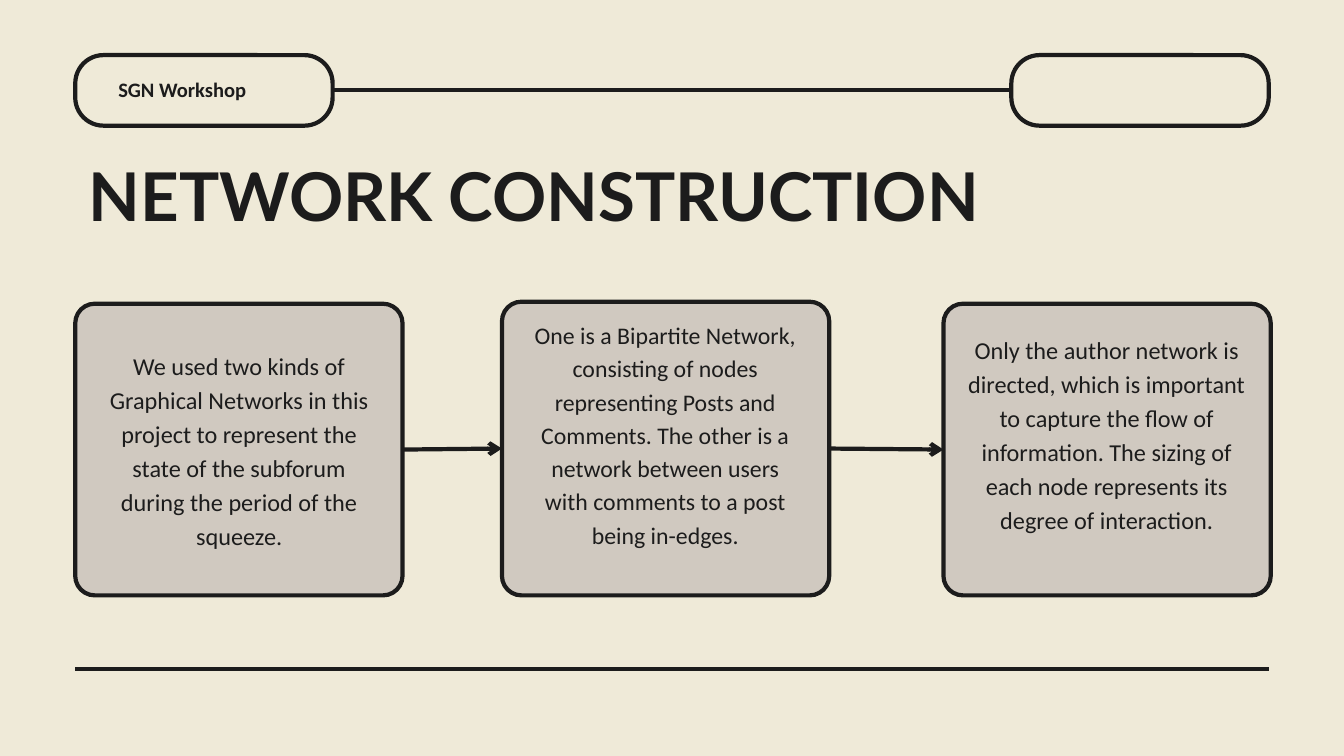
"""Build the network construction slide with three linked cards."""
import pptx
import pptx.dml.color
import pptx.enum.shapes
import pptx.enum.text
import pptx.oxml
import pptx.oxml.ns
import pptx.util

Inches = pptx.util.Inches
Pt = pptx.util.Pt
RGBColor = pptx.dml.color.RGBColor
ALIGN = pptx.enum.text.PP_ALIGN

CREAM = RGBColor(0xEF, 0xEA, 0xD8)
TAUPE = RGBColor(0xD0, 0xC9, 0xC0)
INK = RGBColor(0x1C, 0x1C, 0x1C)
STROKE = Pt(4.5)
LEFT, RIGHT = 1.12, 18.88
TOP_SITE, LEFT_SITE, BOTTOM_SITE, RIGHT_SITE = range(4)

CARDS = [
    {"box": (1.12, 4.52, 4.87, 4.34), "text_box": (1.46, 5.15, 4.2, 2.99),
     "size": 26, "words": "We used two kinds of Graphical Networks in this project to "
     "represent the state of the subforum during the period of the squeeze."},
    {"box": (7.47, 4.49, 4.87, 4.37), "text_box": (7.87, 4.7, 4.06, 3.91),
     "size": 25.5, "words": "One is a Bipartite Network, consisting of nodes representing "
     "Posts and Comments. The other is a network between users with comments to a post "
     "being in-edges."},
    {"box": (14.04, 4.52, 4.87, 4.34), "text_box": (14.37, 4.92, 4.2, 3.49),
     "size": 26, "words": "Only the author network is directed, which is important to "
     "capture the flow of information. The sizing of each node represents its degree "
     "of interaction."},
]


def write_text(holder, words, font, size, spacing, align=ALIGN.LEFT, bold=False):
    """Fill a text holder with one evenly spaced paragraph."""
    frame = holder.text_frame
    frame.word_wrap = True
    frame.auto_size = pptx.enum.text.MSO_AUTO_SIZE.NONE
    frame.vertical_anchor = pptx.enum.text.MSO_ANCHOR.TOP
    frame.margin_left = frame.margin_right = frame.margin_top = frame.margin_bottom = 0
    paragraph = frame.paragraphs[0]
    paragraph.alignment = align
    paragraph.line_spacing = Pt(spacing)
    paragraph.space_before = Pt(0)
    run = paragraph.add_run()
    run.text = words
    run.font.name = font
    run.font.size = Pt(size)
    run.font.bold = bold
    run.font.color.rgb = INK


def add_title(slide, words):
    """Place and fill the title placeholder."""
    title = slide.shapes.title
    title.left, title.top = Inches(1.32), Inches(2.5)
    title.width, title.height = Inches(17.75), Inches(1.14)
    write_text(title, words, "Lato", 72, 72, bold=True)


def add_text(slide, box, words, size, spacing, **style):
    """Add a text box in the body font."""
    holder = slide.shapes.add_textbox(*map(Inches, box))
    write_text(holder, words, "Calibri", size, spacing, **style)


def add_panel(slide, box, radius, fill):
    """Add an outlined rounded rectangle with a corner radius in inches."""
    panel = slide.shapes.add_shape(
        pptx.enum.shapes.MSO_SHAPE.ROUNDED_RECTANGLE, *map(Inches, box))
    panel.adjustments[0] = radius / min(box[2:])
    panel.shadow.inherit = False
    panel.fill.solid()
    panel.fill.fore_color.rgb = fill
    panel.line.color.rgb = INK
    panel.line.width = STROKE
    return panel


def add_line(slide, start, end, arrow=False):
    """Add a straight line between two points, optionally with an arrowhead."""
    line = slide.shapes.add_connector(
        pptx.enum.shapes.MSO_CONNECTOR.STRAIGHT, *map(Inches, start + end))
    line.line.color.rgb = INK
    line.line.width = STROKE
    properties = line._element.spPr
    if arrow:
        head = pptx.oxml.parse_xml(
            f'<a:tailEnd {pptx.oxml.ns.nsdecls("a")} type="arrow"/>')
        properties.find(pptx.oxml.ns.qn("a:ln")).append(head)
    properties.append(pptx.oxml.parse_xml(
        f'<a:effectLst {pptx.oxml.ns.nsdecls("a")}/>'))
    return line


def link(slide, source, target, arrow=False):
    """Join the right side of one panel to the left side of the next."""
    line = add_line(slide, (0, 0), (1, 1), arrow)
    line.begin_connect(source, RIGHT_SITE)
    line.end_connect(target, LEFT_SITE)


def main():
    """Build and save the slide."""
    deck = pptx.Presentation()
    deck.slide_width, deck.slide_height = Inches(20), Inches(11.25)
    slide = deck.slides.add_slide(deck.slide_layouts.get_by_name("Title Only"))
    slide.background.fill.solid()
    slide.background.fill.fore_color.rgb = CREAM

    add_line(slide, (LEFT, 9.96), (RIGHT, 9.96))
    add_title(slide, "NETWORK CONSTRUCTION")

    tab_width = 3.83
    tabs = [add_panel(slide, (left, 0.82, tab_width, 1.05), 0.42, CREAM)
            for left in (LEFT, RIGHT - tab_width)]
    link(slide, *tabs)
    add_text(slide, (1.76, 1.2, 2.55, 0.32), "SGN Workshop", 22, 22, bold=True)

    panels = [add_panel(slide, card["box"], 0.29, TAUPE) for card in CARDS]
    for card in CARDS:
        add_text(slide, card["text_box"], card["words"], card["size"],
                 card["size"] * 1.4, align=ALIGN.CENTER)
    for source, target in zip(panels, panels[1:]):
        link(slide, source, target, arrow=True)

    deck.save("out.pptx")


if __name__ == "__main__":
    main()
